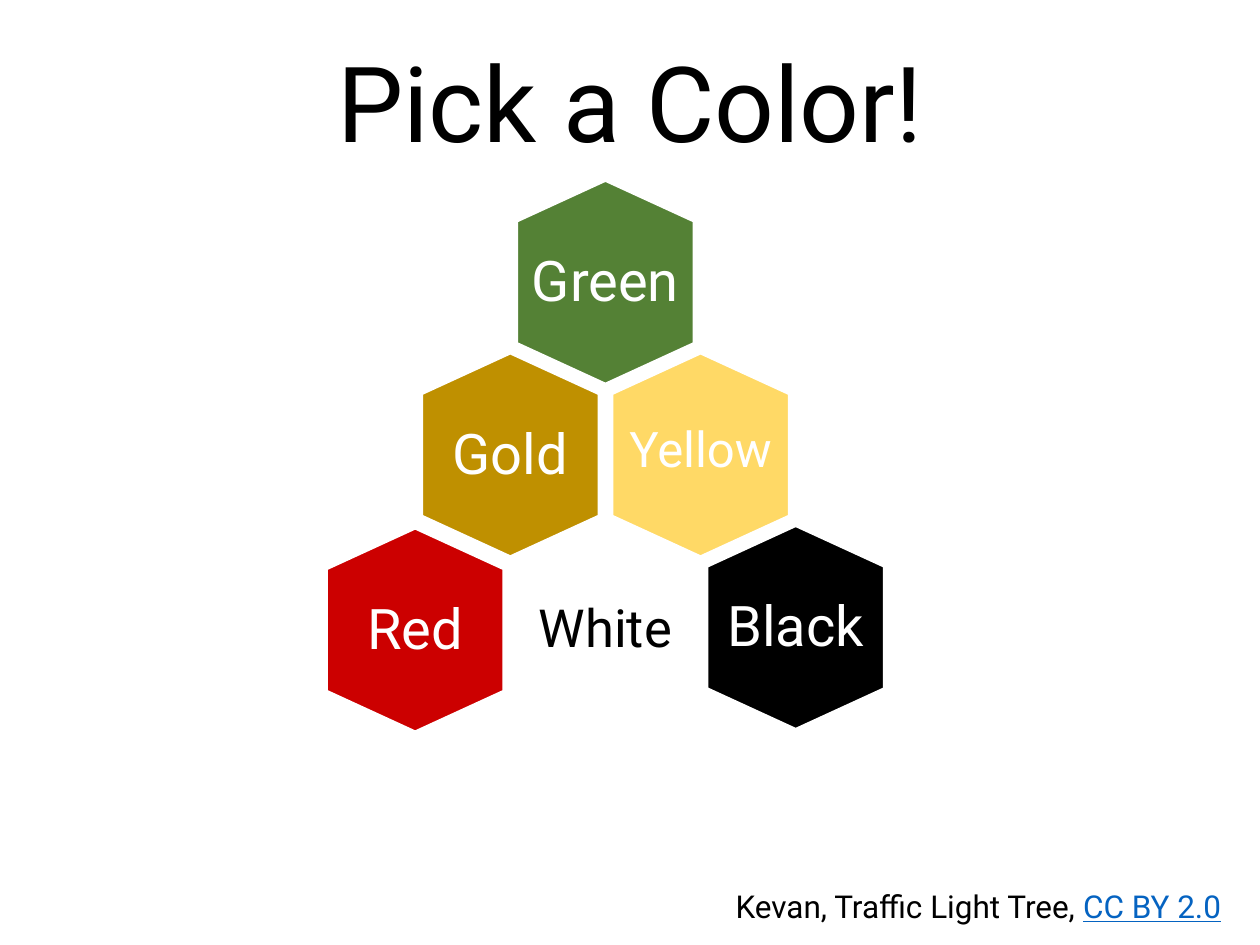
"""Build the "Pick a Color!" slide: a pyramid of labelled hexagons."""
from dataclasses import dataclass
from typing import Any, NamedTuple, Optional

from pptx import Presentation
from pptx.dml.color import RGBColor as RGB
from pptx.enum.shapes import MSO_SHAPE as SHAPE
from pptx.enum.text import MSO_ANCHOR as ANCHOR, PP_ALIGN as ALIGN
from pptx.util import Inches, Pt


@dataclass(frozen=True)
class Theme:
    font: str = "Roboto"
    white: str = "FFFFFF"
    black: str = "000000"
    green: str = "548135"
    gold: str = "BF9000"
    yellow: str = "FFD966"
    red: str = "CC0000"
    link: str = "0563C1"
    title: int = 60
    label: int = 32
    label_mid: int = 30
    label_small: int = 28
    credit: int = 18
    border: float = 2.5


@dataclass(frozen=True)
class Honeycomb:
    left: float = 2.48
    top: float = 1.53
    col: float = 1.51
    row: float = 1.37
    length: float = 1.63
    breadth: float = 1.42
    label_drop: float = 0.37
    label_line: float = 0.02


class Tile(NamedTuple):
    name: str
    col: float
    row: int
    fill: Optional[str]
    ink: str
    size: int
    drop: float = 0


class Span(NamedTuple):
    text: str
    color: str
    underline: bool = False


T = Theme()
GRID = Honeycomb()
WIDTH, HEIGHT = 10, 7.5
TILES = (
    Tile("Green", 1, 0, T.green, T.white, T.label),
    Tile("Gold", 0.5, 1, T.gold, T.white, T.label),
    Tile("Yellow", 1.5, 1, T.yellow, T.white, T.label_small),
    Tile("Black", 2, 2, T.black, T.white, T.label),
    Tile("White", 1, 2, None, T.black, T.label_mid, 0.03),
    Tile("Red", 0, 2, T.red, T.white, T.label, 0.02),
)


def write(sp: Any, spans: tuple[Span, ...], size: int, align: Any,
          anchor: Any = ANCHOR.TOP, pad: float = 0.05, spacing: float = 1.0) -> None:
    """Fill a shape with one paragraph, run by run."""
    tf = sp.text_frame
    tf.word_wrap = True
    tf.vertical_anchor = anchor
    tf.margin_left = tf.margin_right = Inches(0.1)
    tf.margin_top = tf.margin_bottom = Inches(pad)
    p = tf.paragraphs[0]
    p.alignment = align
    p.line_spacing = spacing
    for span in spans:
        r = p.add_run()
        r.text = span.text
        r.font.name = T.font
        r.font.size = Pt(size)
        r.font.color.rgb = RGB.from_string(span.color)
        if span.underline:
            r.font.underline = True


def add_hexagon(shapes: Any, left: float, top: float, fill: str) -> None:
    """Add an upright hexagon with a white border."""
    sp = shapes.add_shape(SHAPE.FLOWCHART_PREPARATION, Inches(left), Inches(top),
                          Inches(GRID.length), Inches(GRID.breadth))
    sp.rotation = 270
    sp.shadow.inherit = False
    sp.fill.solid()
    sp.fill.fore_color.rgb = RGB.from_string(fill)
    sp.line.color.rgb = RGB.from_string(T.white)
    sp.line.width = Pt(T.border)


def add_tile(s: Any, tile: Tile) -> None:
    """Add a hexagon and its label at a honeycomb position."""
    left = GRID.left + tile.col * GRID.col
    top = GRID.top + tile.row * GRID.row + tile.drop
    shapes = s.shapes
    if tile.fill:
        shapes = s.shapes.add_group_shape().shapes
        add_hexagon(shapes, left, top, tile.fill)
    label = shapes.add_textbox(Inches(left + (GRID.length - GRID.breadth) / 2),
                               Inches(top + GRID.label_drop), Inches(GRID.breadth),
                               Inches(tile.size * GRID.label_line))
    write(label, (Span(tile.name, tile.ink),), tile.size, ALIGN.CENTER)


def add_text(s: Any, x: float, y: float, w: float, h: float) -> Any:
    """Add a text box placed by percentages of the slide's size."""
    return s.shapes.add_textbox(Inches(x * WIDTH / 100), Inches(y * HEIGHT / 100),
                                Inches(w * WIDTH / 100), Inches(h * HEIGHT / 100))


def main() -> None:
    """Create the slide and save it."""
    prs = Presentation()
    prs.slide_width, prs.slide_height = Inches(WIDTH), Inches(HEIGHT)
    s = prs.slides.add_slide(prs.slide_layouts[6])
    write(add_text(s, 0, 4, 100, 15), (Span("Pick a Color!", T.black),),
          T.title, ALIGN.CENTER, ANCHOR.MIDDLE, pad=0.1, spacing=0.9)
    credit = (Span("Kevan, Traffic Light Tree, ", T.black),
              Span("CC BY 2.0", T.link, underline=True))
    write(add_text(s, 48.6, 93.2, 49.3, 5.3), credit, T.credit, ALIGN.RIGHT)
    for tile in TILES:
        add_tile(s, tile)
    prs.save("out.pptx")


if __name__ == "__main__":
    main()
